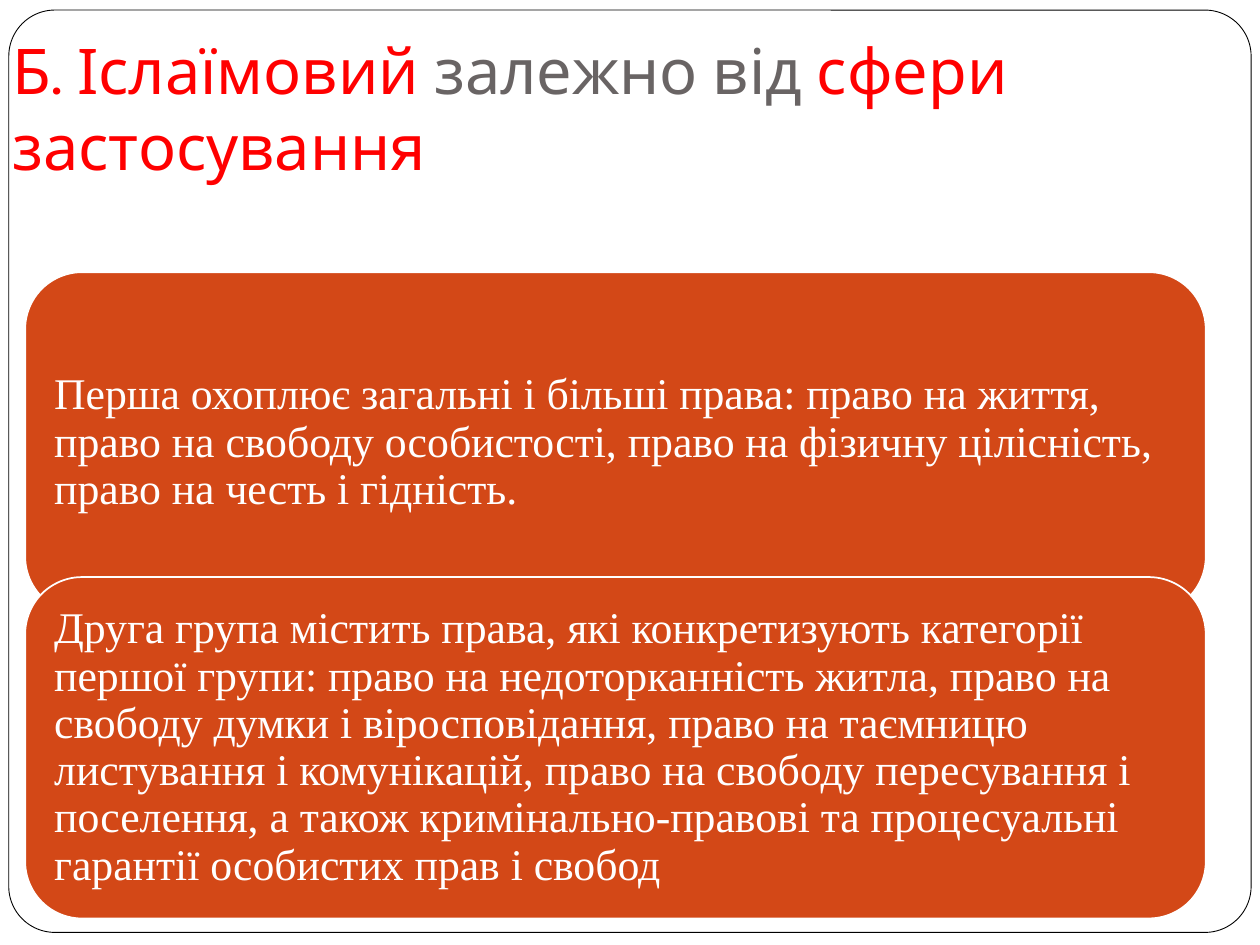
import pptx
import pptx.util
import pptx.dml.color
import pptx.enum.shapes
import pptx.enum.text

Inches, Pt = pptx.util.Inches, pptx.util.Pt
COLORS = {"white": "FFFFFF", "black": "000000", "red": "FF0000",
          "gray": "696464", "orange": "D34817"}

presentation = pptx.Presentation()
presentation.slide_width, presentation.slide_height = Inches(10), Inches(7.5)
slide = presentation.slides.add_slide(presentation.slide_layouts[6])


def color(name):
    return pptx.dml.color.RGBColor.from_string(COLORS[name])


def add_panel(left, top, width, height, fill, line, line_width):
    shape = slide.shapes.add_shape(
        pptx.enum.shapes.MSO_SHAPE.ROUNDED_RECTANGLE,
        Inches(left), Inches(top), Inches(width), Inches(height))
    shape.shadow.inherit = False
    shape.fill.solid()
    shape.fill.fore_color.rgb = color(fill)
    shape.line.color.rgb = color(line)
    shape.line.width = Pt(line_width)
    return shape


# Slide frame
frame = add_panel(0.07, 0.08, 9.86, 7.32, "white", "black", 0.5)
frame.adjustments[0] = 0.05

# Title in two colours
title = slide.shapes.add_textbox(0, Inches(0.3), Inches(9.5), Inches(1.25))
title_frame = title.text_frame
title_frame.word_wrap = True
title_frame.vertical_anchor = pptx.enum.text.MSO_ANCHOR.BOTTOM
title_frame.margin_bottom = Inches(0.1)
title_parts = [("Б. Іслаїмовий ", "red"), ("залежно від ", "gray"),
               ("сфери застосування", "red")]
for text, name in title_parts:
    run = title_frame.paragraphs[0].add_run()
    run.text = text
    run.font.name = "Karla"
    run.font.size = Pt(36)
    run.font.color.rgb = color(name)

# Two groups of rights, the second overlapping the first
groups = [
    "Перша охоплює загальні і більші права: право на життя, право на свободу "
    "особистості, право на фізичну цілісність, право на честь і гідність.",
    "Друга група містить права, які конкретизують категорії першої групи: право "
    "на недоторканність житла, право на свободу думки і віросповідання, право на "
    "таємницю листування і комунікацій, право на свободу пересування і поселення, "
    "а також кримінально-правові та процесуальні гарантії особистих прав і свобод",
]
first_top, row_step = 2.16, 2.42
for row, text in enumerate(groups):
    panel = add_panel(0.2, first_top + row * row_step, 9.37, 2.71, "orange", "white", 1)
    text_frame = panel.text_frame
    text_frame.text = text
    text_frame.word_wrap = True
    text_frame.vertical_anchor = pptx.enum.text.MSO_ANCHOR.MIDDLE
    text_frame.margin_top = text_frame.margin_bottom = Inches(0.1)
    paragraph = text_frame.paragraphs[0]
    paragraph.alignment = pptx.enum.text.PP_ALIGN.LEFT
    paragraph.line_spacing = 0.9
    run = paragraph.runs[0]
    run.font.name = "Times New Roman"
    run.font.size = Pt(25)
    run.font.color.rgb = color("white")

presentation.save("out.pptx")
